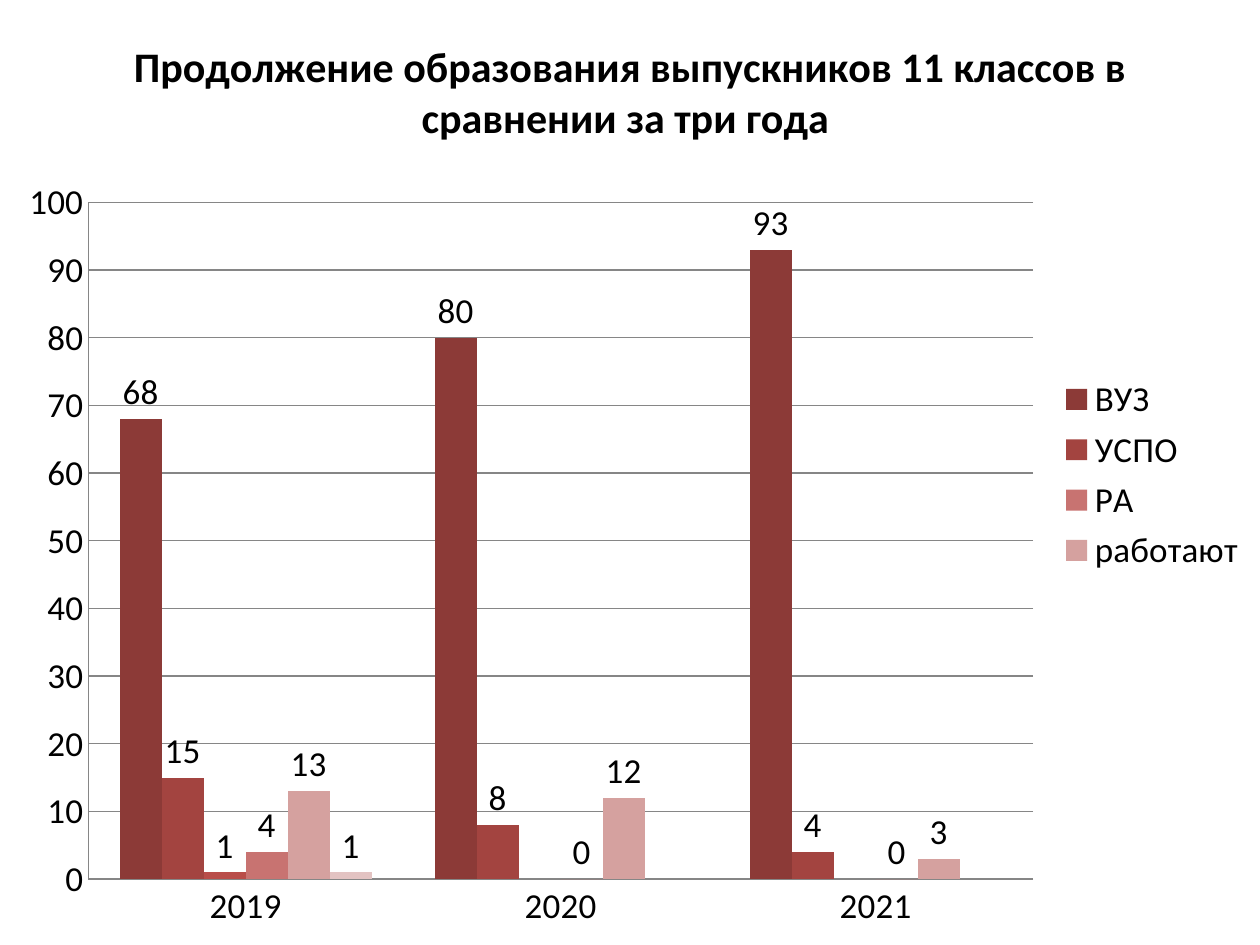
from dataclasses import dataclass

from pptx import Presentation
from pptx.chart.data import CategoryChartData
from pptx.dml.color import RGBColor as Rgb
from pptx.enum.chart import XL_CHART_TYPE as Kind
from pptx.enum.chart import XL_LABEL_POSITION as Spot
from pptx.enum.chart import XL_LEGEND_POSITION as Side
from pptx.enum.chart import XL_TICK_MARK as Tick
from pptx.oxml import parse_xml
from pptx.oxml.ns import nsdecls, qn
from pptx.util import Emu, Pt

SCALE = 914400 / 126
WIDE, HIGH = 1260, 945
TITLE = "Продолжение образования выпускников 11 классов в сравнении за три года "
YEARS = ("2019", "2020", "2021")
ROWS = (
    ("ВУЗ", (68, 80, 93), "8C3A37"),
    ("УСПО", (15, 8, 4), "A34440"),
    ("Series 3", (1, None, None), "B94D49"),
    ("РА", (4, 0, 0), "C87371"),
    ("работают", (13, 12, 3), "D5A19F"),
    ("Series 6", (1, None, None), "E3C3C2"),
)
HIDDEN = (2, 5)


@dataclass(frozen=True)
class Theme:
    """Hold the colours and type sizes."""

    font: str = "Calibri"
    ink: str = "000000"
    line: str = "868686"
    head: int = 24
    body: int = 20


THEME = Theme()


def px(n):
    """Turn pixels into EMU."""
    return Emu(round(n * SCALE))


def style(font, size, bold=False):
    """Set the typeface, size, weight and colour."""
    font.name, font.size, font.bold = THEME.font, Pt(size), bold
    font.color.rgb = Rgb.from_string(THEME.ink)


def rule(form):
    """Give a line the thin grey of the grid."""
    form.line.width = Pt(0.75)
    form.line.color.rgb = Rgb.from_string(THEME.line)


def add_chart(slide, x, y, w, h):
    """Add the column chart of all groups by year."""
    data = CategoryChartData(number_format="0")
    data.categories = YEARS
    for name, vals, _ in ROWS:
        data.add_series(name, vals)
    frame = slide.shapes.add_chart(
        Kind.COLUMN_CLUSTERED, px(x), px(y), px(w), px(h), data
    )
    chart = frame.chart
    style(chart.font, THEME.body)
    return chart


def set_title(chart):
    """Write the bold chart title."""
    chart.has_title = True
    chart.chart_title.include_in_layout = False
    para = chart.chart_title.text_frame.paragraphs[0]
    para.text = TITLE
    style(para.runs[0].font, THEME.head, True)


def set_bars(chart):
    """Colour the columns and label their values."""
    plot = chart.plots[0]
    plot.gap_width, plot.overlap = 150, 0
    plot.vary_by_categories = False
    for bar, (_, _, tint) in zip(plot.series, ROWS):
        bar.format.fill.solid()
        bar.format.fill.fore_color.rgb = Rgb.from_string(tint)
        bar.invert_if_negative = False
        tags = bar.data_labels
        tags.show_value = True
        tags.position = Spot.OUTSIDE_END
        style(tags.font, THEME.body)


def set_axes(chart):
    """Format both axes and the grid."""
    for axis in (chart.category_axis, chart.value_axis):
        axis.major_tick_mark = axis.minor_tick_mark = Tick.NONE
        style(axis.tick_labels.font, THEME.body)
        rule(axis.format)
    axis = chart.value_axis
    axis.minimum_scale, axis.maximum_scale, axis.major_unit = 0, 100, 10
    axis.tick_labels.number_format = "0"
    axis.tick_labels.number_format_is_linked = False
    axis.has_major_gridlines = True
    rule(axis.major_gridlines.format)


def set_key(chart):
    """Place the legend and hide its unnamed entries."""
    chart.has_legend = True
    key = chart.legend
    key.position, key.include_in_layout = Side.RIGHT, False
    style(key.font, THEME.body)
    spot = key._element.find(qn("c:legendPos"))
    for i in reversed(HIDDEN):
        spot.addnext(parse_xml(
            f'<c:legendEntry {nsdecls("c")}><c:idx val="{i}"/>'
            '<c:delete val="1"/></c:legendEntry>'
        ))


def set_area(chart, x, y, w, h):
    """Fix the inner plot area as shares of the chart."""
    area = chart._chartSpace.chart.plotArea
    for old in area.findall(qn("c:layout")):
        area.remove(old)
    modes = "".join(
        f'<c:{tag} val="{val}"/>'
        for tag, val in (
            ("layoutTarget", "inner"), ("xMode", "edge"), ("yMode", "edge"),
            ("x", x), ("y", y), ("w", w), ("h", h),
        )
    )
    area.insert(0, parse_xml(
        f'<c:layout {nsdecls("c")}><c:manualLayout>{modes}'
        "</c:manualLayout></c:layout>"
    ))


def main():
    """Build and save the slide."""
    deck = Presentation()
    deck.slide_width, deck.slide_height = px(WIDE), px(HIGH)
    slide = deck.slides.add_slide(deck.slide_layouts[6])
    chart = add_chart(slide, 0, 5, WIDE, HIGH - 5)
    set_title(chart)
    set_bars(chart)
    set_axes(chart)
    set_key(chart)
    set_area(chart, 0.07, 0.21, 0.75, 0.72)
    deck.save("out.pptx")


if __name__ == "__main__":
    main()
